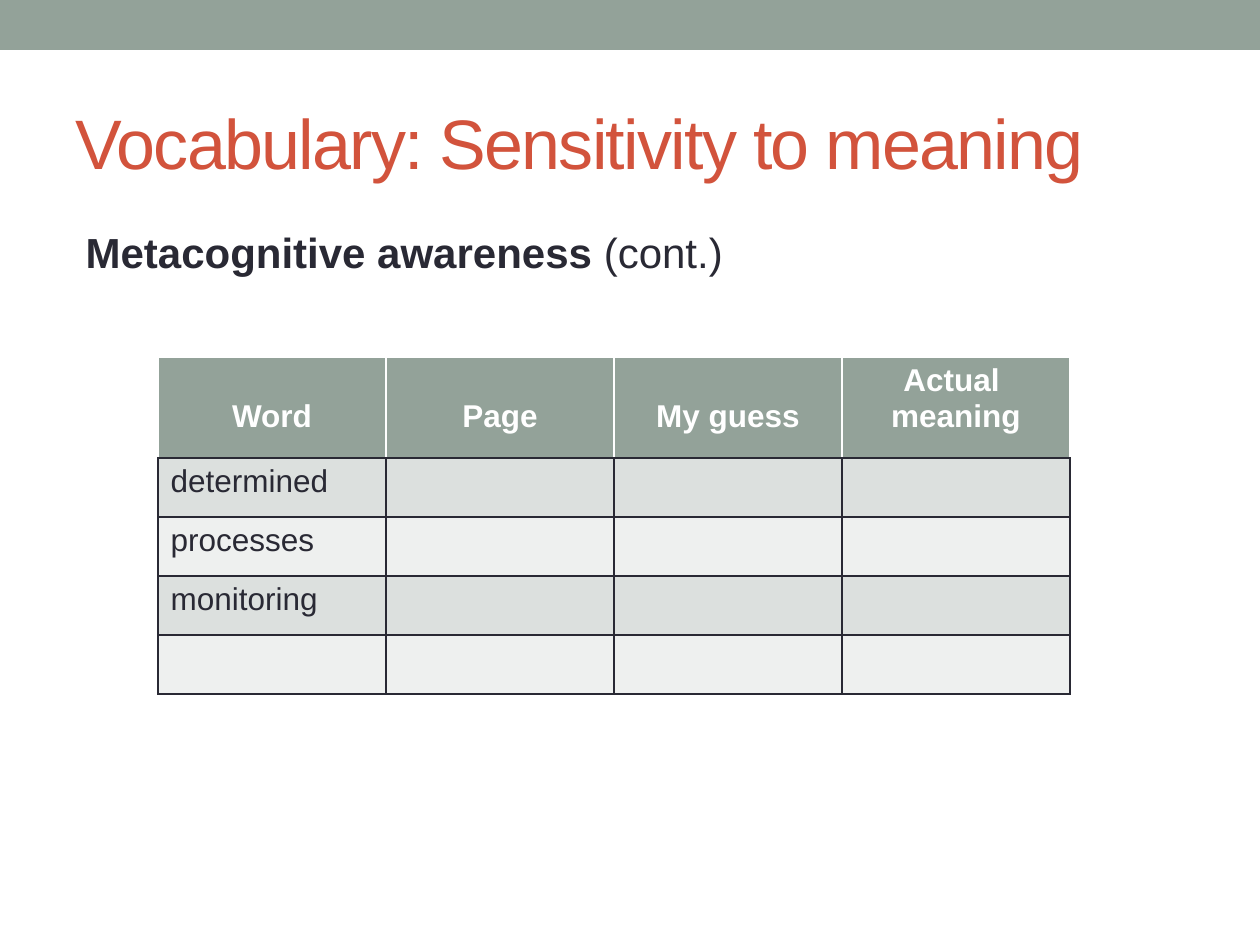
"""Build the vocabulary slide with its word-guess table."""
from lxml.etree import SubElement
from pptx import Presentation
from pptx.dml.color import RGBColor
from pptx.enum.shapes import MSO_SHAPE
from pptx.enum.text import MSO_ANCHOR, PP_ALIGN
from pptx.oxml.ns import qn
from pptx.util import Pt

PX = 914400 / 126
COLORS = {"sage": "93A299", "title": "D2533C", "ink": "292934", "white": "FFFFFF",
          "odd": "DCE0DE", "even": "EEF0EF"}
ROWS = [["Word", "Page", "My guess", "Actual \nmeaning"],
        ["determined"], ["processes"], ["monitoring"], []]
COLUMN_WIDTH, HEADER_HEIGHT, ROW_HEIGHT = 228, 101, 59


def px(*lengths):
    return [round(length * PX) for length in lengths]


def style(run, size, color, bold=False):
    run.font.name = "Arial"
    run.font.size = Pt(size)
    run.font.bold = bold
    run.font.color.rgb = RGBColor.from_string(COLORS[color])


deck = Presentation()
deck.slide_width, deck.slide_height = px(1260, 945)
slide = deck.slides.add_slide(deck.slide_layouts[1])

banner = slide.shapes.add_shape(MSO_SHAPE.RECTANGLE, *px(0, 0, 1260, 50))
banner.shadow.inherit = False
banner.fill.solid()
banner.fill.fore_color.rgb = RGBColor.from_string(COLORS["sage"])
banner.line.fill.background()

title = slide.shapes.title
title.left, title.top, title.width, title.height = px(63, 73, 1134, 136)
title.text_frame.text = "Vocabulary: Sensitivity to meaning"
title.text_frame.vertical_anchor = MSO_ANCHOR.MIDDLE
heading = title.text_frame.paragraphs[0]
heading.alignment = PP_ALIGN.LEFT
style(heading.runs[0], 40, "title")
heading.runs[0].font._element.set("spc", "-100")

body = slide.placeholders[1]
body.left, body.top, body.width, body.height = px(73, 220, 1134, 672)
topic = body.text_frame.paragraphs[0]
for words, bold in [("Metacognitive awareness ", True), ("(cont.)", False)]:
    part = topic.add_run()
    part.text = words
    style(part, 24, "ink", bold)
topic_format = topic._p.get_or_add_pPr()
topic_format.set("marL", "0")
topic_format.set("indent", "0")
SubElement(topic_format, qn("a:buNone"))

table_height = HEADER_HEIGHT + ROW_HEIGHT * (len(ROWS) - 1)
guesses = slide.shapes.add_table(
    len(ROWS), 4, *px(158, 357, COLUMN_WIDTH * 4, table_height)).table
for column in guesses.columns:
    column.width = px(COLUMN_WIDTH)[0]
for row_number, words in enumerate(ROWS):
    header = row_number == 0
    guesses.rows[row_number].height = px(HEADER_HEIGHT if header else ROW_HEIGHT)[0]
    band = "sage" if header else "odd" if row_number % 2 else "even"
    for column_number in range(4):
        cell = guesses.cell(row_number, column_number)
        cell.text_frame.text = words[column_number] if column_number < len(words) else ""
        if header and len(cell.text_frame.paragraphs) == 1:
            cell.margin_top = px(42)[0]
        for paragraph in cell.text_frame.paragraphs:
            paragraph.font.size = Pt(18)
            paragraph.alignment = PP_ALIGN.CENTER if header else PP_ALIGN.LEFT
            for run in paragraph.runs:
                style(run, 18, "white" if header else "ink", header)
        cell_format = cell._tc.get_or_add_tcPr()
        for side in ("lnL", "lnR", "lnT", "lnB"):
            border = SubElement(cell_format, qn(f"a:{side}"), w=str(Pt(1)))
            border_color = "white" if header and side != "lnB" else "ink"
            SubElement(SubElement(border, qn("a:solidFill")), qn("a:srgbClr"),
                       val=COLORS[border_color])
        cell.fill.solid()
        cell.fill.fore_color.rgb = RGBColor.from_string(COLORS[band])

deck.save("out.pptx")
